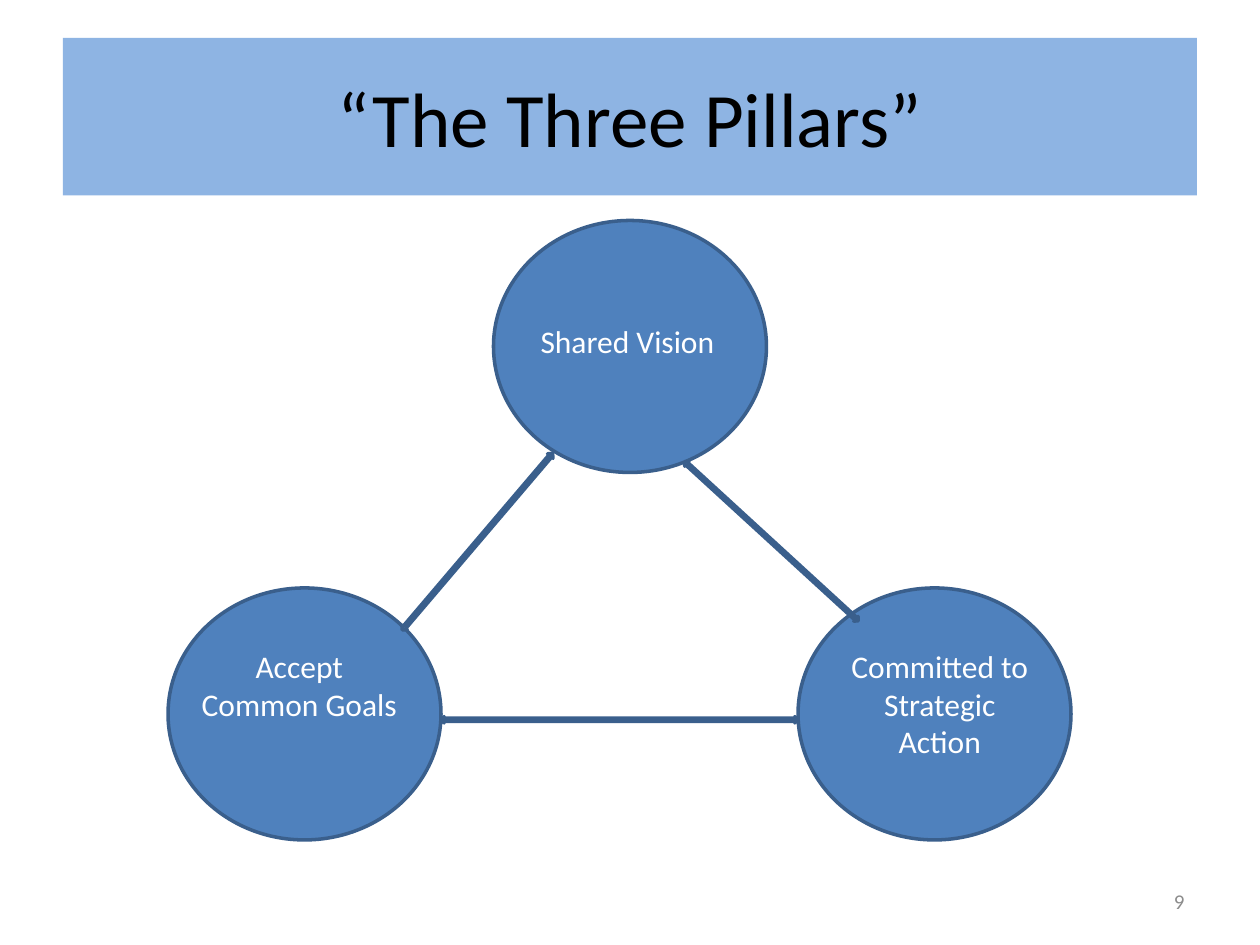
from dataclasses import dataclass

import pptx
import pptx.dml.color
import pptx.enum.shapes
import pptx.enum.text
import pptx.util

Pt = pptx.util.Pt
MSO_SHAPE = pptx.enum.shapes.MSO_SHAPE
PP_ALIGN = pptx.enum.text.PP_ALIGN
MSO_ANCHOR = pptx.enum.text.MSO_ANCHOR

FONT = "Calibri"
BLUE = "4F81BD"
OUTLINE = "3A5F8C"
CIRCLE_W, CIRCLE_H = 156, 144
LABEL_W = 126


@dataclass
class Box:
    left: float
    top: float
    width: float
    height: float


@dataclass
class Pillar:
    text: str
    left: float
    top: float
    label_left: float
    label_top: float
    label_height: float


@dataclass
class Arrow:
    box: Box
    rotation: float


PILLARS = [
    Pillar("Accept Common Goals", 96, 336, 108, 366, 72.7),
    Pillar("Committed to Strategic Action", 456, 336, 474, 366, 72.7),
    Pillar("Shared Vision", 282, 126, 295.5, 180.6, 29),
]

ARROWS = [
    Arrow(Box(206.6, 307.5, 132.5, 4), 310.4),
    Arrow(Box(252, 409.5, 204, 3.6), 0),
    Arrow(Box(373.5, 307.5, 134.6, 3.6), 222.5),
]


def rgb(value: str) -> pptx.dml.color.RGBColor:
    return pptx.dml.color.RGBColor.from_string(value)


def add_shape(s, kind, box: Box, fill: str, line: str = ""):
    sp = s.shapes.add_shape(
        kind, Pt(box.left), Pt(box.top), Pt(box.width), Pt(box.height)
    )
    sp.shadow.inherit = False
    sp.fill.solid()
    sp.fill.fore_color.rgb = rgb(fill)
    if line:
        sp.line.color.rgb = rgb(line)
        sp.line.width = Pt(2)
    else:
        sp.line.fill.background()
    return sp


def set_text(sp, text: str, size: float, color: str, align, anchor) -> None:
    tf = sp.text_frame
    tf.text = text
    tf.word_wrap = True
    tf.vertical_anchor = anchor
    p = tf.paragraphs[0]
    p.alignment = align
    r = p.runs[0]
    r.font.name = FONT
    r.font.size = Pt(size)
    r.font.color.rgb = rgb(color)


def add_text(s, box: Box, text: str, size: float, color: str, align, anchor) -> None:
    sp = s.shapes.add_textbox(
        Pt(box.left), Pt(box.top), Pt(box.width), Pt(box.height)
    )
    set_text(sp, text, size, color, align, anchor)


def add_circle(s, pillar: Pillar) -> None:
    box = Box(pillar.left, pillar.top, CIRCLE_W, CIRCLE_H)
    add_shape(s, MSO_SHAPE.OVAL, box, BLUE, OUTLINE)


def add_label(s, pillar: Pillar) -> None:
    box = Box(pillar.label_left, pillar.label_top, LABEL_W, pillar.label_height)
    add_text(s, box, pillar.text, 18, "FFFFFF", PP_ALIGN.CENTER, MSO_ANCHOR.TOP)


def add_arrow(s, arrow: Arrow) -> None:
    sp = add_shape(s, MSO_SHAPE.LEFT_RIGHT_ARROW, arrow.box, BLUE, OUTLINE)
    sp.rotation = arrow.rotation


def main() -> None:
    prs = pptx.Presentation()
    prs.slide_width, prs.slide_height = Pt(720), Pt(540)
    s = prs.slides.add_slide(prs.slide_layouts[6])

    title = add_shape(s, MSO_SHAPE.RECTANGLE, Box(36, 21.6, 648, 90), "8EB4E3")
    set_text(
        title, "“The Three Pillars”", 44, "000000", PP_ALIGN.CENTER, MSO_ANCHOR.MIDDLE
    )
    for pillar in PILLARS:
        add_circle(s, pillar)
    for pillar in PILLARS:
        add_label(s, pillar)
    for arrow in ARROWS:
        add_arrow(s, arrow)
    add_text(
        s, Box(516, 500.5, 168, 28.75), "9", 12, "8C8C8C",
        PP_ALIGN.RIGHT, MSO_ANCHOR.MIDDLE,
    )
    prs.save("out.pptx")


if __name__ == "__main__":
    main()
